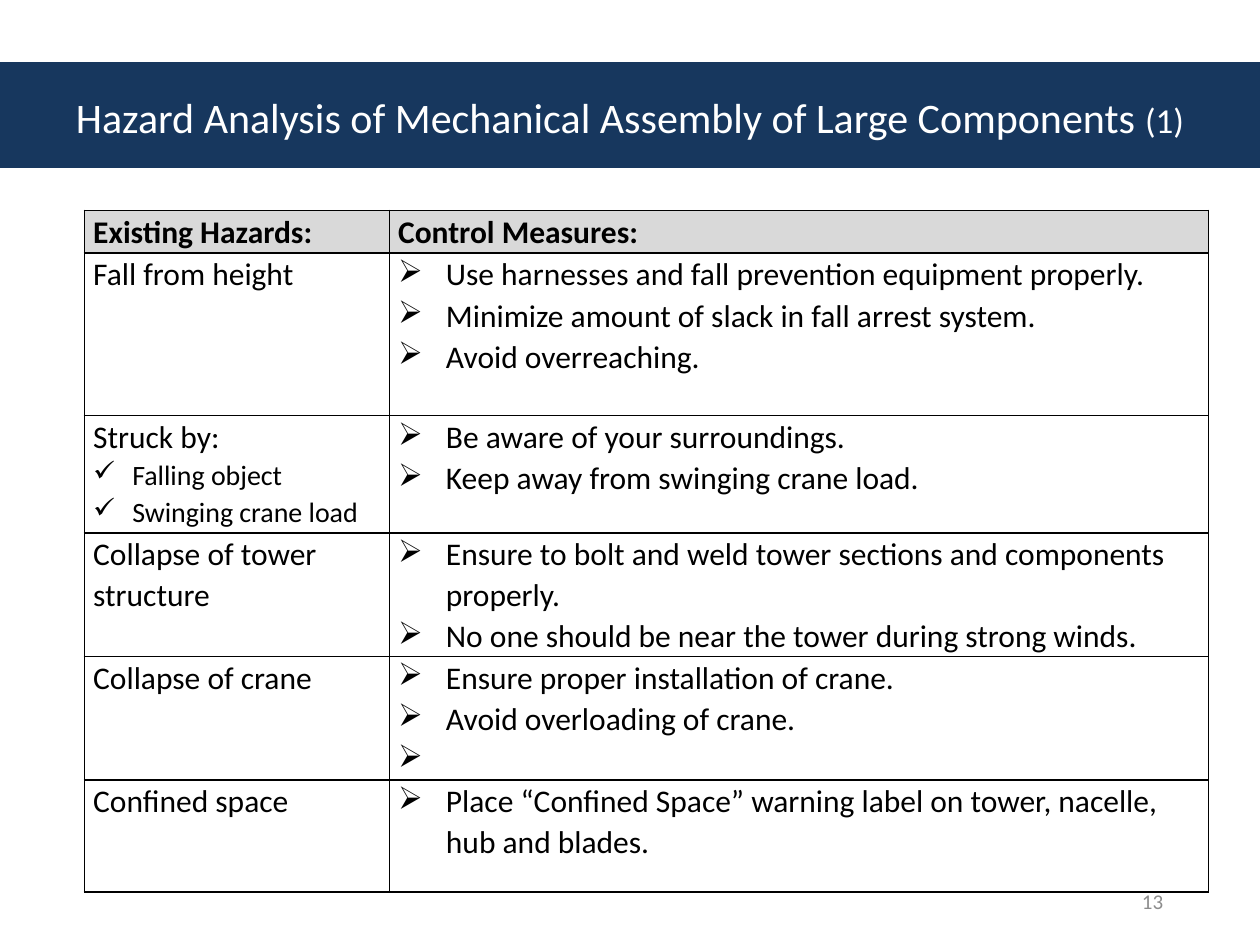
from dataclasses import dataclass

from lxml import etree
from pptx import Presentation
from pptx.dml.color import RGBColor
from pptx.enum import shapes, text
from pptx.oxml import ns
from pptx.util import Pt

PX = 9144


@dataclass(frozen=True)
class Theme:
    font: str = "Calibri"
    navy: RGBColor = RGBColor(0x17, 0x37, 0x5E)
    white: RGBColor = RGBColor(0xFF, 0xFF, 0xFF)
    black: RGBColor = RGBColor(0, 0, 0)
    header: RGBColor = RGBColor(0xD9, 0xD9, 0xD9)
    muted: RGBColor = RGBColor(0x8C, 0x8C, 0x8C)
    title: int = 24
    title_suffix: int = 20
    body: int = 18
    detail: int = 16
    number: int = 12


THEME = Theme()

HEADINGS = ("Existing Hazards:", "Control Measures:")
HAZARDS = [
    (129, "Fall from height", [], [
        "Use harnesses and fall prevention equipment properly.",
        "Minimize amount of slack in fall arrest system.",
        "Avoid overreaching.",
    ]),
    (93, "Struck by:", ["Falling object", "Swinging crane load"], [
        "Be aware of your surroundings.",
        "Keep away from swinging crane load.",
    ]),
    (91, "Collapse of tower structure", [], [
        "Ensure to bolt and weld tower sections and components properly.",
        "No one should be near the tower during strong winds.",
    ]),
    (91, "Collapse of crane", [], [
        "Ensure proper installation of crane.",
        "Avoid overloading of crane.",
        " ",
    ]),
    (89, "Confined space", [], [
        "Place “Confined Space” warning label on tower, nacelle, hub and blades.",
    ]),
]


def emu(*lengths):
    return [length * PX for length in lengths]


def style_font(paragraph, color, size=None, bold=None):
    font = paragraph.font
    font.name = THEME.font
    font.color.rgb = color
    font.bold = bold
    if size:
        font.size = Pt(size)


def add_title(slide, left, top, width, height):
    band = slide.shapes.add_shape(
        shapes.MSO_SHAPE.RECTANGLE, *emu(left, top, width, height))
    band.shadow.inherit = False
    band.fill.solid()
    band.fill.fore_color.rgb = THEME.navy
    band.line.color.rgb = THEME.navy
    band.line.width = Pt(0.75)

    title = slide.shapes.title
    title.left, title.top, title.width, title.height = emu(
        left + 50, top - 20, width - 100, height + 42)
    title._element.addprevious(band._element)
    frame = title.text_frame
    frame.vertical_anchor = text.MSO_ANCHOR.MIDDLE
    paragraph = frame.paragraphs[0]
    paragraph.alignment = text.PP_ALIGN.CENTER
    style_font(paragraph, THEME.white)
    for words, size in (
        ("Hazard Analysis of Mechanical Assembly of Large Components ", THEME.title),
        ("(1)", THEME.title_suffix),
    ):
        run = paragraph.add_run()
        run.text = words
        run.font.size = Pt(size)


def add_bullet(paragraph, symbol, indent):
    properties = paragraph._p.get_or_add_pPr()
    properties.set("marL", str(indent * PX))
    properties.set("indent", str(-indent * PX))
    bullet = etree.Element(ns.qn("a:buChar"), char=symbol)
    properties.find(ns.qn("a:defRPr")).addprevious(bullet)


def add_borders(cell):
    properties = cell._tc.get_or_add_tcPr()
    for position, side in enumerate(("lnL", "lnR", "lnT", "lnB")):
        line = etree.Element(ns.qn(f"a:{side}"), w=str(Pt(1)))
        fill = etree.SubElement(line, ns.qn("a:solidFill"))
        etree.SubElement(fill, ns.qn("a:srgbClr"), val=str(THEME.black))
        properties.insert(position, line)


def fill_cell(cell, lines, bold=False, fill=None):
    cell.margin_left = cell.margin_right = 7 * PX
    cell.margin_top = cell.margin_bottom = 0
    if fill:
        cell.fill.solid()
        cell.fill.fore_color.rgb = fill
    else:
        cell.fill.background()
    add_borders(cell)
    frame = cell.text_frame
    for index, (words, size, symbol, indent) in enumerate(lines):
        paragraph = frame.add_paragraph() if index else frame.paragraphs[0]
        paragraph.text = words
        paragraph.line_spacing = 1.07
        style_font(paragraph, THEME.black, size, bold)
        if symbol:
            add_bullet(paragraph, symbol, indent)


def plain(words):
    return words, THEME.body, None, 0


def add_hazard_table(slide, left, top, column_widths):
    heights = [34] + [hazard[0] for hazard in HAZARDS]
    table = slide.shapes.add_table(
        len(heights), len(column_widths),
        *emu(left, top, sum(column_widths), sum(heights))).table
    table.first_row = table.horz_banding = False
    for column, width in zip(table.columns, column_widths):
        column.width = width * PX
    for row, height in zip(table.rows, heights):
        row.height = height * PX
    for column, heading in enumerate(HEADINGS):
        fill_cell(table.cell(0, column), [plain(heading)], True, THEME.header)
    for row, (_, hazard, details, measures) in enumerate(HAZARDS, start=1):
        causes = [(detail, THEME.detail, "✓", 31) for detail in details]
        controls = [(measure, THEME.body, "➢", 38) for measure in measures]
        fill_cell(table.cell(row, 0), [plain(hazard)] + causes)
        fill_cell(table.cell(row, 1), controls)


def add_slide_number(slide, left, top, width, height):
    frame = slide.shapes.add_textbox(*emu(left, top, width, height)).text_frame
    frame.word_wrap = True
    frame.vertical_anchor = text.MSO_ANCHOR.MIDDLE
    paragraph = frame.paragraphs[0]
    paragraph.text = "13"
    paragraph.alignment = text.PP_ALIGN.RIGHT
    style_font(paragraph, THEME.muted, THEME.number)


def main():
    presentation = Presentation()
    presentation.slide_width, presentation.slide_height = emu(1000, 750)
    slide = presentation.slides.add_slide(presentation.slide_layouts[5])
    add_title(slide, 0, 50, 1000, 83)
    add_hazard_table(slide, 67, 167, (242, 650))
    add_slide_number(slide, 700, 695, 233, 40)
    presentation.save("out.pptx")


if __name__ == "__main__":
    main()
